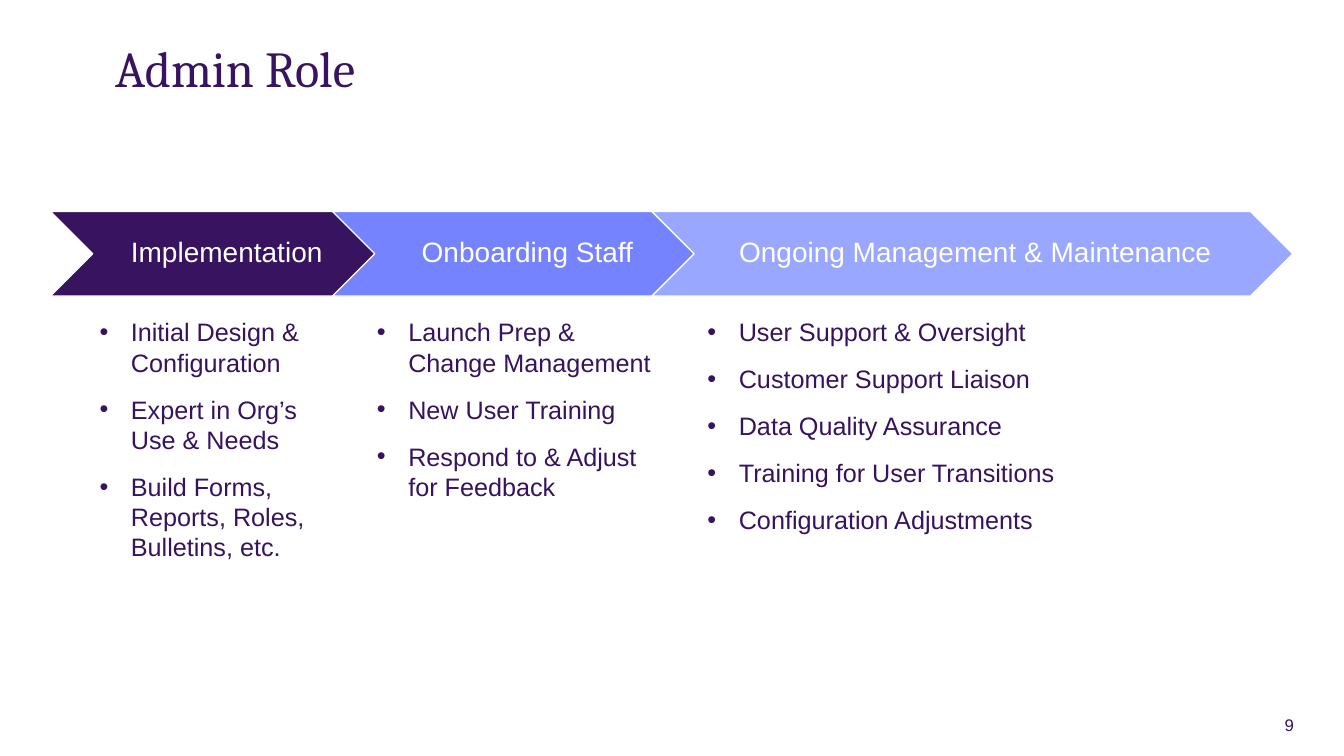
from lxml.etree import SubElement
from pptx import Presentation
from pptx.dml.color import RGBColor
from pptx.enum.shapes import MSO_SHAPE
from pptx.enum.text import MSO_ANCHOR, PP_ALIGN
from pptx.oxml.ns import qn
from pptx.util import Cm, Pt

PLUM = RGBColor(0x38, 0x13, 0x60)
INK = RGBColor(0x37, 0x13, 0x5F)
PERIWINKLE = RGBColor(0x75, 0x83, 0xFF)
LAVENDER = RGBColor(0x99, 0xA7, 0xFF)
WHITE = RGBColor(0xFF, 0xFF, 0xFF)

PHASE_LEFT, PHASE_TOP, PHASE_HEIGHT, PHASE_OVERLAP = 1.27, 5.33, 2.13, 1.63
DUTIES_TOP, DUTIES_HEIGHT = 7.98, 6.5

PHASES = [
    ("Implementation", PLUM, 8.74, 2.51, 5.79, [
        "Initial Design & Configuration",
        "Expert in Org’s Use & Needs",
        "Build Forms, Reports, Roles, Bulletins, etc.",
    ]),
    ("Onboarding Staff", PERIWINKLE, 9.68, 9.5, 7.14, [
        "Launch Prep & Change Management",
        "New User Training",
        "Respond to & Adjust for Feedback",
    ]),
    ("Ongoing Management & Maintenance", LAVENDER, 16.15, 17.83, 13.23, [
        "User Support & Oversight",
        "Customer Support Liaison",
        "Data Quality Assurance",
        "Training for User Transitions",
        "Configuration Adjustments",
    ]),
]


def assign(target, values):
    """Set each named value on the target."""
    for name, value in values.items():
        setattr(target, name, value)


class RoleSlide:
    """Hold the text styles and the slide being built."""

    fonts = {
        "title": {"name": "Cambria", "size": Pt(36)},
        "phase": {"name": "Arial", "size": Pt(20)},
        "duty": {"name": "Arial", "size": Pt(18)},
        "number": {"name": "Arial", "size": Pt(12)},
    }
    colors = {"title": PLUM, "phase": WHITE, "duty": INK, "number": INK}
    paragraphs = {
        "title": {"line_spacing": 0.9, "alignment": PP_ALIGN.LEFT},
        "phase": {"line_spacing": 0.9, "alignment": PP_ALIGN.CENTER},
        "duty": {"alignment": PP_ALIGN.LEFT},
        "number": {"alignment": PP_ALIGN.RIGHT},
    }
    flush = dict.fromkeys(
        ("margin_left", "margin_top", "margin_right", "margin_bottom"), 0)
    phase_frame = {
        "margin_left": Cm(0.23), "margin_top": Cm(0.08),
        "margin_right": Cm(0.08), "margin_bottom": Cm(0.08),
        "vertical_anchor": MSO_ANCHOR.MIDDLE, "word_wrap": True,
    }

    def __init__(self, slide):
        """Keep the slide to draw on."""
        self.slide = slide

    def fill_paragraph(self, paragraph, wording, style):
        """Fill a paragraph in a named style."""
        paragraph.text = wording
        assign(paragraph, self.paragraphs[style])
        assign(paragraph.font, self.fonts[style])
        paragraph.font.color.rgb = self.colors[style]

    def frame(self, left, top, width, height, wrap=True):
        """Add a text box without margins and return its frame."""
        box = self.slide.shapes.add_textbox(
            Cm(left), Cm(top), Cm(width), Cm(height))
        assign(box.text_frame, {**self.flush, "word_wrap": wrap})
        return box.text_frame

    def label(self, wording, style, *place, wrap=True):
        """Add a single line of text."""
        frame = self.frame(*place, wrap=wrap)
        self.fill_paragraph(frame.paragraphs[0], wording, style)

    def phase(self, wording, fill, left, width):
        """Add a labelled chevron."""
        chevron = self.slide.shapes.add_shape(
            MSO_SHAPE.CHEVRON, Cm(left), Cm(PHASE_TOP),
            Cm(width), Cm(PHASE_HEIGHT))
        chevron.shadow.inherit = False
        chevron.fill.solid()
        chevron.fill.fore_color.rgb = fill
        chevron.line.color.rgb = WHITE
        chevron.line.width = Pt(1)
        assign(chevron.text_frame, self.phase_frame)
        self.fill_paragraph(chevron.text_frame.paragraphs[0], wording, "phase")

    def duties(self, wordings, left, width):
        """Add a bulleted list."""
        frame = self.frame(left, DUTIES_TOP, width, DUTIES_HEIGHT)
        for index, wording in enumerate(wordings):
            duty = frame.add_paragraph() if index else frame.paragraphs[0]
            properties = duty._p.get_or_add_pPr()
            properties.set("marL", str(Cm(0.79)))
            properties.set("indent", str(-Cm(0.79)))
            SubElement(properties, qn("a:buFont")).set("typeface", "Arial")
            SubElement(properties, qn("a:buChar")).set("char", "•")
            if index:
                duty.space_before = Pt(12)
            self.fill_paragraph(duty, wording, "duty")


def main():
    """Build and save the slide."""
    deck = Presentation()
    assign(deck, {"slide_width": Cm(33.87), "slide_height": Cm(19.05)})
    page = RoleSlide(deck.slides.add_slide(deck.slide_layouts[6]))
    page.label("Admin Role", "title", 2.9, 1.12, 29.69, 2.92)
    phase_left = PHASE_LEFT
    for name, fill, phase_width, duties_left, duties_width, duties in PHASES:
        page.phase(name, fill, phase_left, phase_width)
        page.duties(duties, duties_left, duties_width)
        phase_left += phase_width - PHASE_OVERLAP
    page.label("9", "number", 32.08, 18.01, 0.53, 0.51, wrap=False)
    deck.save("out.pptx")


if __name__ == "__main__":
    main()
